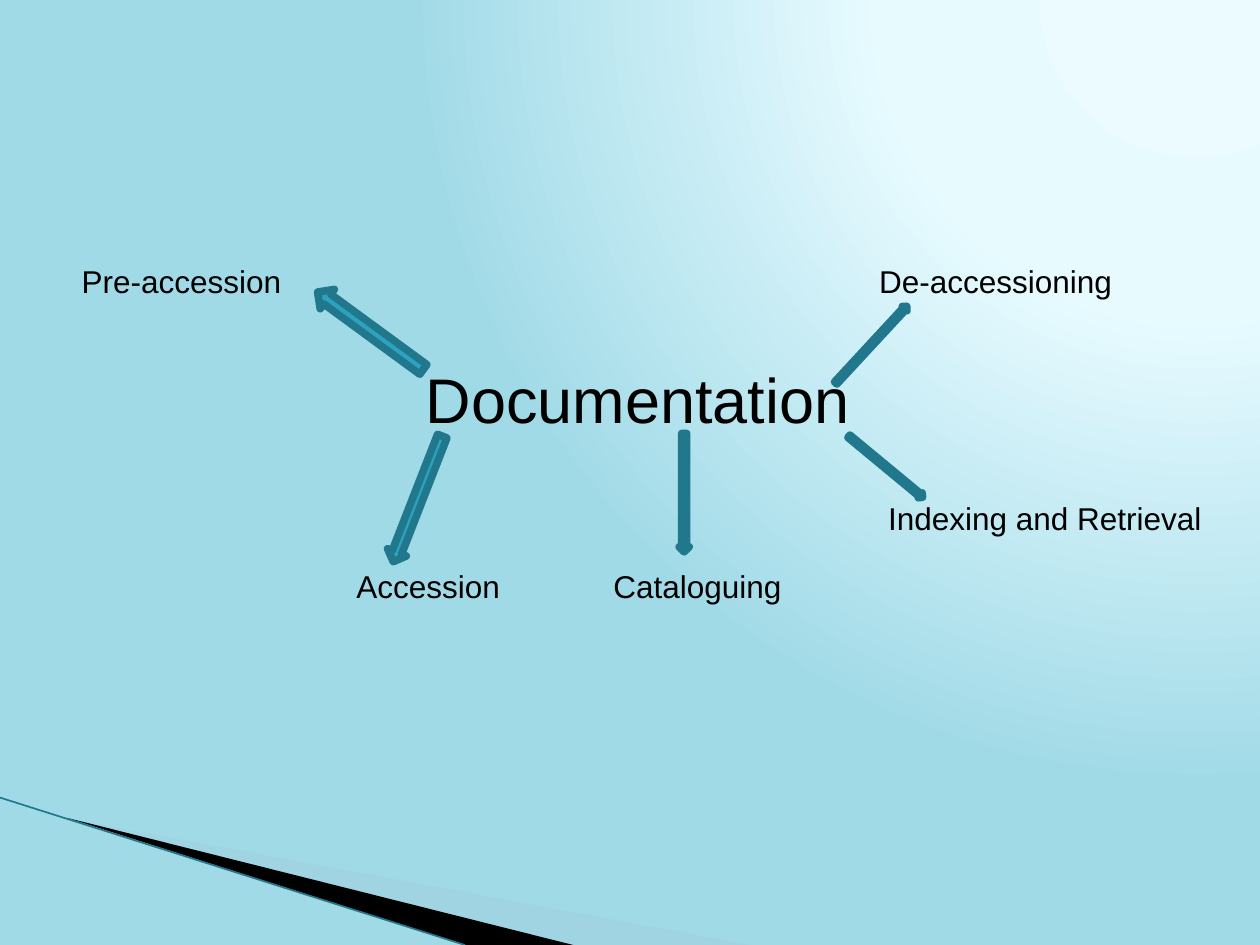
from dataclasses import dataclass

from lxml import etree
from pptx import Presentation
from pptx.dml.color import RGBColor
from pptx.enum import shapes, text
from pptx.oxml import ns, parse_xml
from pptx.util import Inches, Pt


@dataclass(frozen=True)
class Theme:
    """Colours, font and type sizes of the slide."""
    ink: str = "000000"
    arrow: str = "2DA2BF"
    edge: str = "21788D"
    wedge: str = "A0CBDC"
    glow: tuple = ((0, "EBFBFF"), (40, "E7FBFF"), (100, "A1DAE7"))
    font: str = "Arial"
    hub_size: int = 36
    label_size: int = 18
    arrow_edge: float = 4.33
    hairline: float = 0.95


THEME = Theme()

HUB = ("Documentation", (3.28, 2.81, 3.6, 0.71))
STAGES = [
    ("Pre-accession", (0.55, 2.03, 1.8, 0.4)),
    ("Accession", (2.73, 4.45, 1.35, 0.4)),
    ("Cataloguing", (4.77, 4.45, 1.55, 0.4)),
    ("Indexing and Retrieval", (6.95, 3.91, 2.78, 0.4)),
    ("De-accessioning", (6.88, 2.03, 2.07, 0.4)),
]
RIGHT, DOWN = shapes.MSO_SHAPE.RIGHT_ARROW, shapes.MSO_SHAPE.DOWN_ARROW
ARROWS = [
    (DOWN, (5.39, 3.44, 0.08, 0.94), 0),
    (RIGHT, (6.5, 2.71, 0.83, 0.05), 312.8),
    (RIGHT, (2.42, 2.53, 1.04, 0.19), 216.2),
    (RIGHT, (6.65, 3.68, 0.76, 0.05), 39.6),
    (RIGHT, (2.78, 3.88, 1.07, 0.16), 111.3),
]


def rgb(code):
    """Turn a hex code into a colour."""
    return RGBColor.from_string(code)


def paint_background(slide):
    """Fill the background with a glow from the top right."""
    slide.background.fill.gradient()
    linear = slide.element.find(".//" + ns.qn("a:gradFill"))
    stops = "".join(
        f'<a:gs pos="{place * 1000}"><a:srgbClr val="{code}"/></a:gs>'
        for place, code in THEME.glow
    )
    glow = parse_xml(
        f'<a:gradFill {ns.nsdecls("a")} rotWithShape="1"><a:gsLst>{stops}</a:gsLst>'
        '<a:path path="circle"><a:fillToRect l="95000" t="-106000" r="5000" b="206000"/>'
        "</a:path></a:gradFill>"
    )
    linear.getparent().replace(linear, glow)


def add_wedge(slide, corners, color, opacity=100):
    """Draw one borderless wedge through its corners."""
    first, *others = [(Inches(x), Inches(y)) for x, y in corners]
    builder = slide.shapes.build_freeform(*first)
    builder.add_line_segments(others, close=True)
    wedge = builder.convert_to_shape()
    wedge.shadow.inherit = False
    wedge.fill.solid()
    wedge.fill.fore_color.rgb = rgb(color)
    wedge.line.fill.background()
    if opacity < 100:
        tint = wedge.fill._xPr.find(".//" + ns.qn("a:srgbClr"))
        etree.SubElement(tint, ns.qn("a:alpha"), val=str(opacity * 1000))


def add_corner_sweep(slide):
    """Draw the wedges and the hairline in the lower left corner."""
    add_wedge(slide, [(0.55, 6.5), (5.95, 7.5), (4.56, 7.5)], THEME.wedge, 40)
    add_wedge(slide, [(0.53, 6.49), (4.55, 7.5), (3.7, 7.5)], THEME.ink)
    ends = [Inches(n) for n in (0, 6.33, 3.69, 7.5)]
    hairline = slide.shapes.add_connector(shapes.MSO_CONNECTOR.STRAIGHT, *ends)
    hairline.line.color.rgb = rgb(THEME.edge)
    hairline.line.width = Pt(THEME.hairline)
    etree.SubElement(hairline._element.spPr, ns.qn("a:effectLst"))


def write_text(holder, wording, size):
    """Set unwrapped, left-aligned text in a shape."""
    frame = holder.text_frame
    frame.text = wording
    frame.word_wrap = False
    frame.auto_size = text.MSO_AUTO_SIZE.SHAPE_TO_FIT_TEXT
    frame.vertical_anchor = text.MSO_ANCHOR.TOP
    paragraph = frame.paragraphs[0]
    paragraph.alignment = text.PP_ALIGN.LEFT
    font = paragraph.runs[0].font
    font.name, font.size = THEME.font, Pt(size)
    font.color.rgb = rgb(THEME.ink)


def add_hub(slide, wording, box):
    """Place the title at the centre of the diagram."""
    hub = slide.shapes.title
    hub.left, hub.top, hub.width, hub.height = map(Inches, box)
    write_text(hub, wording, THEME.hub_size)


def add_stage(slide, wording, box):
    """Place the label of one stage."""
    label = slide.shapes.add_textbox(*map(Inches, box))
    write_text(label, wording, THEME.label_size)


def add_arrow(slide, preset, box, angle):
    """Place one block arrow turned towards its stage."""
    arrow = slide.shapes.add_shape(preset, *map(Inches, box))
    arrow.rotation = angle
    arrow.shadow.inherit = False
    arrow.fill.solid()
    arrow.fill.fore_color.rgb = rgb(THEME.arrow)
    arrow.line.color.rgb = rgb(THEME.edge)
    arrow.line.width = Pt(THEME.arrow_edge)


def build_documentation_slide(deck):
    """Build the diagram of the documentation stages."""
    slide = deck.slides.add_slide(deck.slide_layouts[5])
    paint_background(slide)
    add_corner_sweep(slide)
    add_hub(slide, *HUB)
    for wording, box in STAGES:
        add_stage(slide, wording, box)
    for preset, box, angle in ARROWS:
        add_arrow(slide, preset, box, angle)


def main():
    """Create and save the presentation."""
    deck = Presentation()
    deck.slide_width, deck.slide_height = Inches(10), Inches(7.5)
    build_documentation_slide(deck)
    deck.save("out.pptx")


if __name__ == "__main__":
    main()
